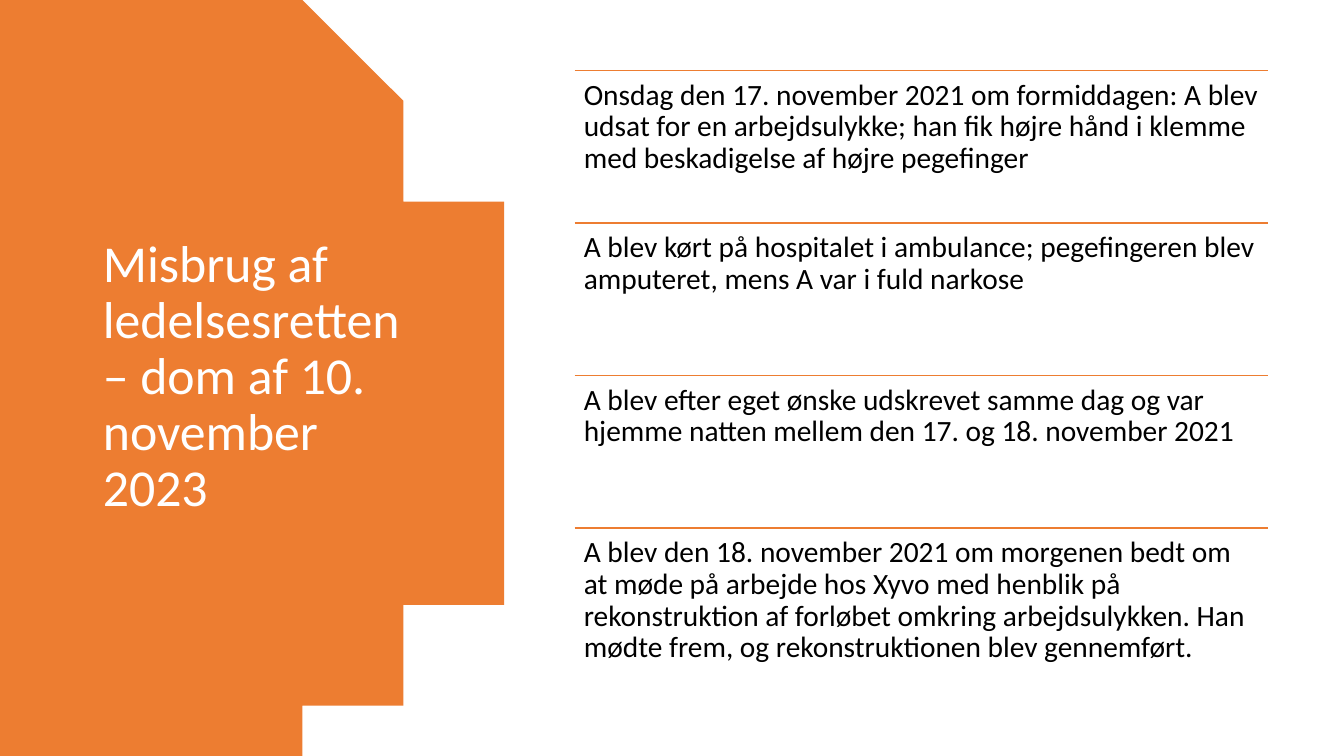
from lxml.etree import SubElement
from pptx import Presentation
from pptx.dml.color import RGBColor
from pptx.enum.shapes import MSO_CONNECTOR
from pptx.enum.text import MSO_ANCHOR, MSO_AUTO_SIZE, PP_ALIGN
from pptx.oxml.ns import qn
from pptx.util import Inches, Pt

WIDE, HIGH = 13.33, 7.5
ORANGE, WHITE, BLACK = "ED7D31", "FFFFFF", "000000"
FONT = "Calibri"

# Right-hand column: four equal rows
LEFT, TOP, SPAN, ROW = 5.7, 0.7, 6.88, 1.513
STEPS = 40

TITLE = "Misbrug af ledelsesretten – dom af 10. november 2023"
EVENTS = [
    "Onsdag den 17. november 2021 om formiddagen: A blev udsat for en "
    "arbejdsulykke; han fik højre hånd i klemme med beskadigelse af højre "
    "pegefinger",
    "A blev kørt på hospitalet i ambulance; pegefingeren blev amputeret, "
    "mens A var i fuld narkose",
    "A blev efter eget ønske udskrevet samme dag og var hjemme natten "
    "mellem den 17. og 18. november 2021",
    "A blev den 18. november 2021 om morgenen bedt om at møde på arbejde "
    "hos Xyvo med henblik på rekonstruktion af forløbet omkring "
    "arbejdsulykken. Han mødte frem, og rekonstruktionen blev gennemført.",
]


def paint(target, color):
    target.rgb = RGBColor.from_string(color)


def write(frame, text, size, color):
    """Put one left-aligned paragraph in a text frame."""
    frame.word_wrap = True
    frame.auto_size = MSO_AUTO_SIZE.NONE
    frame.text = text
    para = frame.paragraphs[0]
    para.alignment = PP_ALIGN.LEFT
    para.line_spacing = 0.9
    para.font.name = FONT
    para.font.size = Pt(size)
    paint(para.font.color, color)


def curve(ends, share):
    """Point on a cubic curve given by four points."""
    rest = 1 - share
    parts = (rest ** 3, 3 * rest ** 2 * share, 3 * rest * share ** 2, share ** 3)
    return tuple(sum(p * end[axis] for p, end in zip(parts, ends))
                 for axis in (0, 1))


def add_dome(slide):
    """Orange panel with a round right edge, mirrored about mid-height."""
    ends = [(2.83, 0), (4.09, 0.77), (4.93, 2.16), (4.93, HIGH / 2)]
    upper = [curve(ends, n / STEPS) for n in range(STEPS + 1)]
    lower = [(x, HIGH - y) for x, y in reversed(upper[:-1])]
    build = slide.shapes.build_freeform(0, 0, scale=Inches(1))
    build.add_line_segments(upper + lower + [(0, HIGH)], close=True)
    dome = build.convert_to_shape()
    dome.shadow.inherit = False
    dome.fill.solid()
    paint(dome.fill.fore_color, ORANGE)
    dome.line.fill.background()
    return dome


def set_title(slide, dome):
    title = slide.shapes.title
    title.left, title.top = Inches(0.92), Inches(0.7)
    title.width, title.height = Inches(3.23), Inches(6.09)
    write(title.text_frame, TITLE, 37, WHITE)
    title.text_frame.vertical_anchor = MSO_ANCHOR.MIDDLE
    title.element.addprevious(dome.element)  # panel goes behind


def add_rule(slide, top):
    rule = slide.shapes.add_connector(
        MSO_CONNECTOR.STRAIGHT, Inches(LEFT), Inches(top),
        Inches(LEFT + SPAN), Inches(top))
    paint(rule.line.color, ORANGE)
    rule.line.width = Pt(1)
    SubElement(rule.element.spPr, qn("a:effectLst"))


def add_event(slide, text, top):
    box = slide.shapes.add_textbox(
        Inches(LEFT), Inches(top), Inches(SPAN), Inches(ROW))
    frame = box.text_frame
    frame.margin_left = frame.margin_right = Inches(0.09)
    frame.margin_top = frame.margin_bottom = Inches(0.09)
    write(frame, text, 21, BLACK)


def main():
    deck = Presentation()
    deck.slide_width, deck.slide_height = Inches(WIDE), Inches(HIGH)
    slide = deck.slides.add_slide(deck.slide_layouts.get_by_name("Title Only"))

    # Left panel and title
    set_title(slide, add_dome(slide))

    # Course of events
    for row, text in enumerate(EVENTS):
        top = TOP + row * ROW
        add_rule(slide, top)
        add_event(slide, text, top)

    deck.save("out.pptx")


if __name__ == "__main__":
    main()
